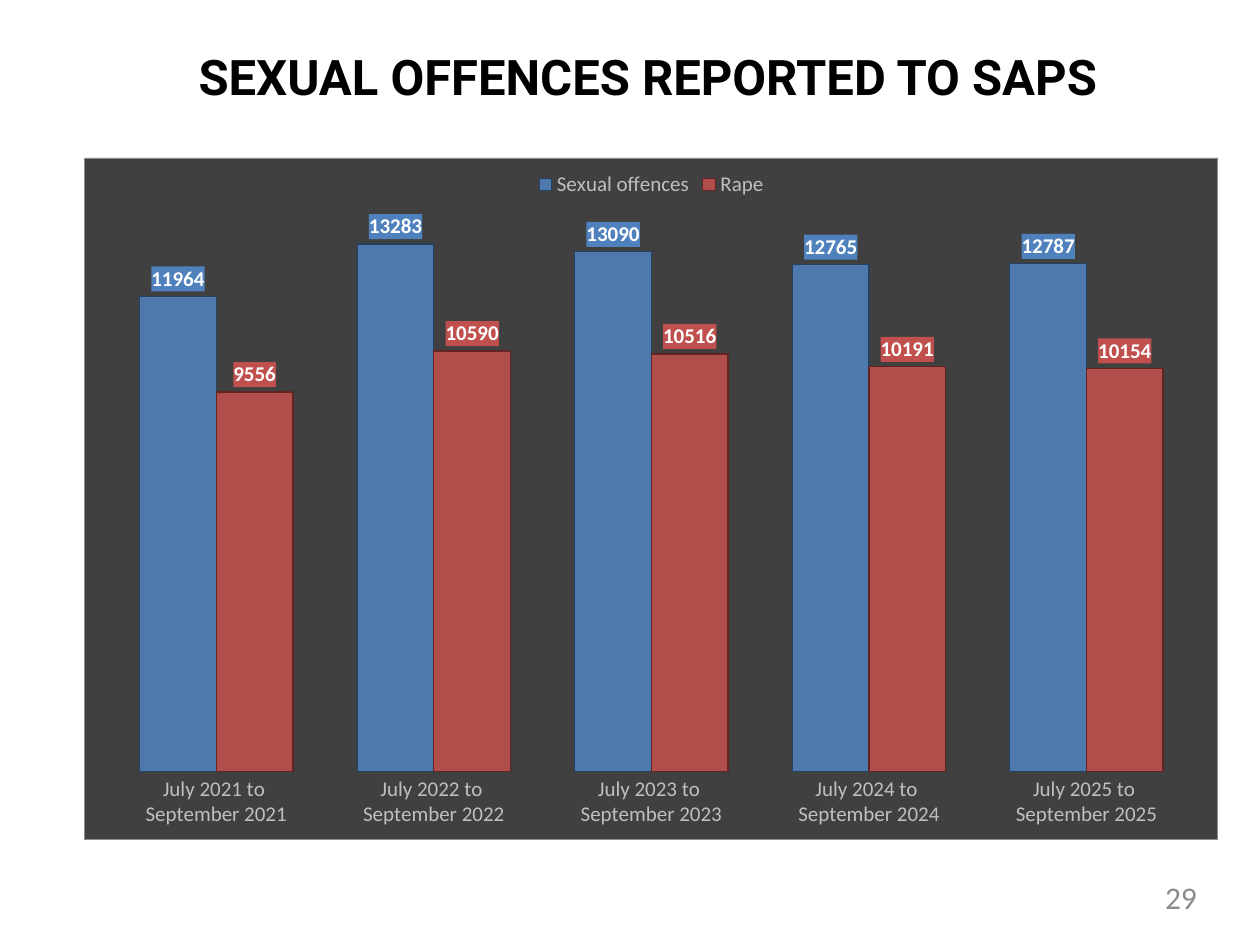
import dataclasses
import typing

import lxml.etree
import pptx
import pptx.chart.data
import pptx.dml.color
import pptx.enum.chart
import pptx.enum.text
import pptx.oxml.ns
import pptx.util

Inches = pptx.util.Inches
qn = pptx.oxml.ns.qn


@dataclasses.dataclass(frozen=True)
class Theme:
    title_font: str = "Roboto"
    body_font: str = "Calibri"
    title_color: str = "000000"
    number_color: str = "8C8C8C"
    panel: str = "404040"
    axis_text: str = "BFBFBF"
    label_text: str = "FFFFFF"
    title_size: int = 28
    number_size: int = 18
    chart_size: int = 12
    bar_opacity: int = 88


@dataclasses.dataclass(frozen=True)
class BarSeries:
    name: str
    values: tuple[int, ...]
    fill: str
    line: str


THEME = Theme()
YEARS = range(2021, 2026)
SERIES = (
    BarSeries("Sexual offences", (11964, 13283, 13090, 12765, 12787), "4F81BD", "254061"),
    BarSeries("Rape", (9556, 10590, 10516, 10191, 10154), "C0504D", "632523"),
)


def rgb(color: str) -> pptx.dml.color.RGBColor:
    return pptx.dml.color.RGBColor.from_string(color)


def set_values(target: typing.Any, values: dict[str, typing.Any]) -> None:
    for name, value in values.items():
        setattr(target, name, value)


def format_font(font: typing.Any, name: str, size: int, color: str, bold: bool = False) -> None:
    set_values(font, {"name": name, "size": pptx.util.Pt(size), "bold": bold})
    font.color.rgb = rgb(color)


def write_line(shape: typing.Any, text: str, box: tuple[float, float, float, float],
               alignment: typing.Any, anchor: typing.Any, **font: typing.Any) -> None:
    """Place a one-line text shape without margins."""
    set_values(shape, dict(zip(("left", "top", "width", "height"), map(Inches, box))))
    frame = shape.text_frame
    set_values(frame, {"margin_left": 0, "margin_top": 0, "margin_right": 0,
                       "margin_bottom": 0, "word_wrap": True, "vertical_anchor": anchor})
    frame.text = text
    paragraph = frame.paragraphs[0]
    paragraph.alignment = alignment
    format_font(paragraph.runs[0].font, **font)


def shape_properties(fill: str, line: str = "") -> typing.Any:
    """Build a c:spPr element with a solid fill and an optional thin border."""
    properties = lxml.etree.Element(qn("c:spPr"))

    def add_fill(parent: typing.Any, color: str) -> None:
        solid = lxml.etree.SubElement(parent, qn("a:solidFill"))
        lxml.etree.SubElement(solid, qn("a:srgbClr"), val=color)

    add_fill(properties, fill)
    if line:
        border = lxml.etree.SubElement(properties, qn("a:ln"), w=str(pptx.util.Pt(0.5)))
        add_fill(border, line)
    return properties


def format_series(series: typing.Any, element: typing.Any, design: BarSeries) -> None:
    # Translucent bars with a dark outline
    series.format.fill.solid()
    series.format.fill.fore_color.rgb = rgb(design.fill)
    color = element.find(f"{qn('c:spPr')}/{qn('a:solidFill')}/{qn('a:srgbClr')}")
    lxml.etree.SubElement(color, qn("a:alpha"), val=str(THEME.bar_opacity * 1000))
    series.format.line.color.rgb = rgb(design.line)
    series.format.line.width = pptx.util.Pt(0.75)

    # Value labels on a plate in the series colour
    labels = series.data_labels
    set_values(labels, {"show_value": True,
                        "position": pptx.enum.chart.XL_LABEL_POSITION.OUTSIDE_END})
    format_font(labels.font, THEME.body_font, THEME.chart_size, THEME.label_text, True)
    text = element.find(f"{qn('c:dLbls')}/{qn('c:txPr')}")
    text.addprevious(shape_properties(design.fill))


def add_offences_chart(slide: typing.Any) -> None:
    data = pptx.chart.data.CategoryChartData()
    data.categories = [f"July {year} to \nSeptember {year}" for year in YEARS]
    for design in SERIES:
        data.add_series(design.name, design.values)
    chart = slide.shapes.add_chart(
        pptx.enum.chart.XL_CHART_TYPE.COLUMN_CLUSTERED,
        Inches(0.67), Inches(1.25), Inches(9), Inches(5.42), data).chart
    chart.has_title = False
    format_font(chart.font, THEME.body_font, 10, THEME.title_color)
    chart.element.find(qn("c:txPr")).addprevious(
        shape_properties(THEME.panel, THEME.number_color))

    # Legend
    chart.has_legend = True
    set_values(chart.legend, {"position": pptx.enum.chart.XL_LEGEND_POSITION.TOP,
                              "include_in_layout": False})

    # Axes
    set_values(chart.value_axis, {"visible": False, "has_major_gridlines": False,
                                  "minimum_scale": 0, "maximum_scale": 14000})
    axis = chart.category_axis
    axis.major_tick_mark = pptx.enum.chart.XL_TICK_MARK.NONE
    axis.format.line.fill.background()
    for font in (chart.legend.font, axis.tick_labels.font):
        format_font(font, THEME.body_font, THEME.chart_size, THEME.axis_text)

    # Bars
    plot = chart.plots[0]
    set_values(plot, {"gap_width": 84, "overlap": 0, "vary_by_categories": False})
    for series, element, design in zip(plot.series, chart.element.iter(qn("c:ser")), SERIES):
        format_series(series, element, design)


def main() -> None:
    presentation = pptx.Presentation()
    set_values(presentation, {"slide_width": Inches(10), "slide_height": Inches(7.5)})
    slide = presentation.slides.add_slide(presentation.slide_layouts[5])
    align = pptx.enum.text.PP_ALIGN
    anchor = pptx.enum.text.MSO_ANCHOR

    # Title
    write_line(slide.shapes.title, "SEXUAL OFFENCES REPORTED TO SAPS",
               (1.39, 0.35, 7.5, 0.51), align.CENTER, anchor.MIDDLE,
               name=THEME.title_font, size=THEME.title_size,
               color=THEME.title_color, bold=True)

    # Page number
    number_box = slide.shapes.add_textbox(0, 0, 0, 0)
    write_line(number_box, "29", (7.2, 6.97, 2.3, 0.3), align.RIGHT, anchor.TOP,
               name=THEME.body_font, size=THEME.number_size, color=THEME.number_color)

    add_offences_chart(slide)
    presentation.save("out.pptx")


if __name__ == "__main__":
    main()
